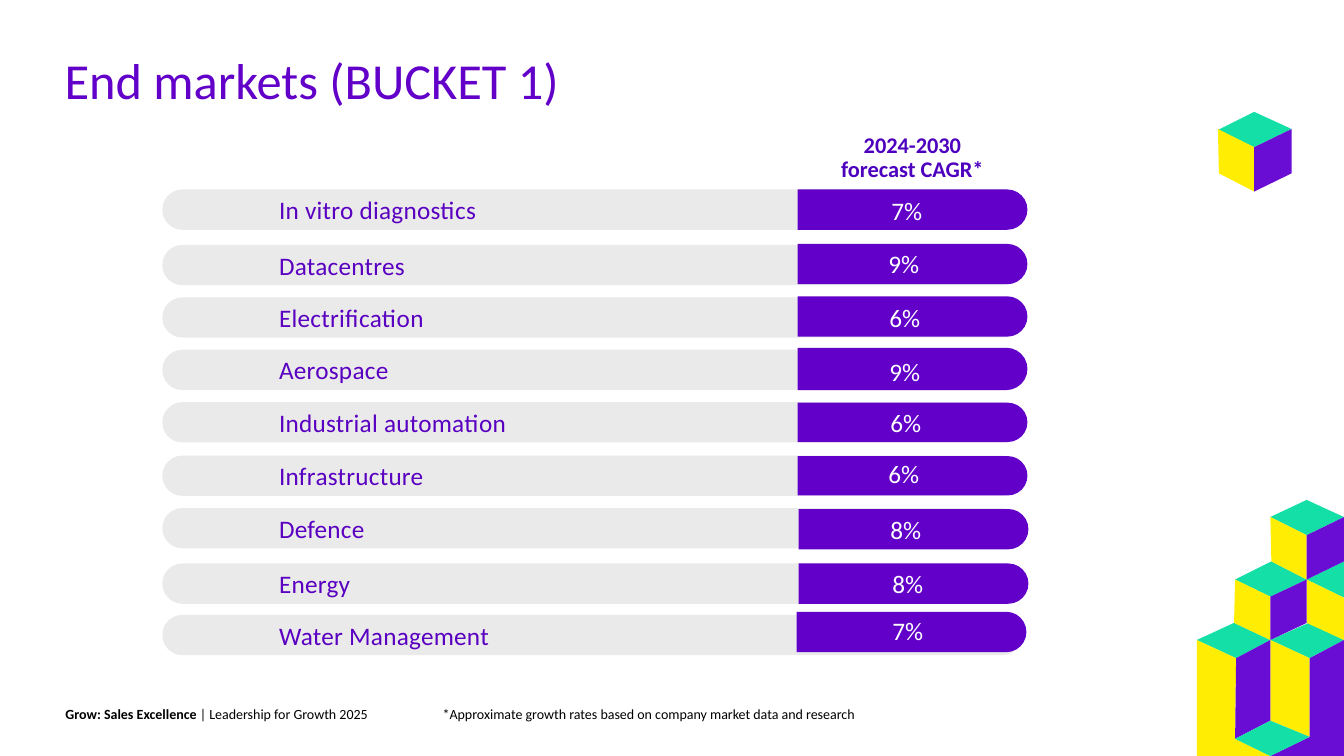
from dataclasses import dataclass

from pptx import Presentation
from pptx.dml.color import RGBColor
from pptx.enum.shapes import MSO_SHAPE as SHAPE
from pptx.enum.text import MSO_ANCHOR as ANCHOR, MSO_AUTO_SIZE as AUTO, PP_ALIGN as ALIGN
from pptx.util import Inches, Pt

PURPLE = RGBColor(0x62, 0x00, 0xC9)
LABEL = RGBColor(0x59, 0x00, 0xC1)
HEADING = RGBColor(0x4D, 0x00, 0xBD)
GREY = RGBColor(0xEA, 0xEA, 0xEA)
WHITE = RGBColor(0xFF, 0xFF, 0xFF)
BLACK = RGBColor(0x00, 0x00, 0x00)
GREEN = RGBColor(0x14, 0xDF, 0xA7)
YELLOW = RGBColor(0xFF, 0xEE, 0x03)
VIOLET = RGBColor(0x6A, 0x0D, 0xD4)

BAR_LEFT, BAR_WIDTH, BAR_HEIGHT = 1.61, 8.53, 0.4
CAP_LENGTH = 2.28
RATE_WIDTH, RATE_HEIGHT = 0.42, 0.27

Point = tuple[int, int]


@dataclass
class Market:
    name: str
    rate: str
    bar_top: float
    cap_centre: tuple[float, float]
    cap_height: float
    rate_at: tuple[float, float]


@dataclass
class Faces:
    color: RGBColor
    polygons: list[list[Point]]


@dataclass
class Span:
    text: str
    size: float
    color: RGBColor
    bold: bool = False
    spacing: int = 0


MARKETS = [
    Market("In vitro diagnostics", "7%", 1.88, (9.05, 2.08), 0.4, (8.84, 1.97)),
    Market("Datacentres", "9%", 2.43, (9.05, 2.62), 0.4, (8.81, 2.5)),
    Market("Electrification", "6%", 2.95, (9.05, 3.14), 0.4, (8.82, 3.03)),
    Market("Aerospace", "9%", 3.47, (9.05, 3.66), 0.42, (8.82, 3.57)),
    Market("Industrial automation", "6%", 3.99, (9.05, 4.19), 0.39, (8.83, 4.07)),
    Market("Infrastructure", "6%", 4.52, (9.05, 4.72), 0.39, (8.81, 4.58)),
    Market("Defence", "8%", 5.04, (9.06, 5.25), 0.4, (8.83, 5.14)),
    Market("Energy", "8%", 5.59, (9.06, 5.79), 0.4, (8.85, 5.67)),
    Market("Water Management", "7%", 6.1, (9.04, 6.27), 0.4, (8.85, 6.14)),
]

CUBES = [
    Faces(GREEN, [
        [(1260, 635), (1224, 618), (1187, 635), (1226, 653)],
        [(1333, 635), (1298, 618), (1260, 635), (1299, 653)],
        [(1333, 557), (1296, 575), (1261, 557), (1225, 575), (1260, 592),
         (1296, 575), (1333, 593)],
        [(1333, 513), (1296, 496), (1260, 513), (1296, 531)],
    ]),
    Faces(YELLOW, [
        [(1260, 750), (1225, 733), (1226, 653), (1187, 635), (1187, 750)],
        [(1260, 635), (1260, 592), (1225, 575), (1224, 618)],
        [(1296, 531), (1260, 513), (1261, 557), (1296, 575)],
        [(1299, 653), (1260, 635), (1260, 715), (1299, 731)],
        [(1333, 593), (1296, 575), (1296, 618), (1333, 635)],
    ]),
    Faces(VIOLET, [
        [(1260, 635), (1226, 653), (1225, 733), (1260, 715)],
        [(1296, 618), (1296, 575), (1260, 592), (1260, 635)],
        [(1333, 750), (1333, 635), (1299, 653), (1299, 731), (1260, 750)],
        [(1333, 513), (1296, 531), (1296, 575), (1333, 557)],
    ]),
    Faces(GREEN, [[(1260, 715), (1225, 733), (1260, 750), (1299, 731)]]),
    Faces(GREEN, [[(1244, 111), (1208, 129), (1244, 146), (1281, 128)]]),
    Faces(YELLOW, [[(1208, 128), (1209, 172), (1244, 190), (1244, 146)]]),
    Faces(VIOLET, [[(1281, 128), (1244, 146), (1244, 190), (1281, 172)]]),
]


def paint(sp, color: RGBColor) -> None:
    sp.shadow.inherit = False
    sp.fill.solid()
    sp.fill.fore_color.rgb = color
    sp.line.fill.background()


def add_faces(s, faces: Faces) -> None:
    first, *others = faces.polygons
    builder = s.shapes.build_freeform(*first[0], scale=Inches(0.01))
    builder.add_line_segments(first[1:], close=True)
    for polygon in others:
        builder.move_to(*polygon[0])
        builder.add_line_segments(polygon[1:], close=True)
    paint(builder.convert_to_shape(), faces.color)


def add_shape(s, kind: SHAPE, box: tuple, color: RGBColor, adjustments: tuple = ()):
    sp = s.shapes.add_shape(kind, *map(Inches, box))
    for i, value in enumerate(adjustments):
        sp.adjustments[i] = value
    paint(sp, color)
    return sp


def write(sp, lines: list[list[Span]], frame: dict, insets: tuple = (0, 0, 0, 0),
          paragraph: dict | None = None) -> None:
    tf = sp.text_frame
    for side, inset in zip(("left", "top", "right", "bottom"), insets):
        setattr(tf, f"margin_{side}", Inches(inset))
    for key, value in frame.items():
        setattr(tf, key, value)
    p = tf.paragraphs[0]
    for key, value in ({"alignment": ALIGN.LEFT} | (paragraph or {})).items():
        setattr(p, key, value)
    for i, line in enumerate(lines):
        if i:
            p.add_line_break()
        for span in line:
            r = p.add_run()
            r.text = span.text
            font = {"name": "Calibri", "size": Pt(span.size), "bold": span.bold}
            for key, value in font.items():
                setattr(r.font, key, value)
            r.font.color.rgb = span.color
            if span.spacing:
                r._r.get_or_add_rPr().set("spc", str(span.spacing))


def add_text(s, box: tuple, lines: list[list[Span]], frame: dict, **formats) -> None:
    write(s.shapes.add_textbox(*map(Inches, box)), lines, frame, **formats)


def add_market(s, market: Market) -> None:
    bar = add_shape(s, SHAPE.ROUNDED_RECTANGLE,
                    (BAR_LEFT, market.bar_top, BAR_WIDTH, BAR_HEIGHT), GREY, (0.5,))
    write(bar, [[Span(market.name, 18, LABEL, spacing=20)]],
          {"word_wrap": True, "vertical_anchor": ANCHOR.MIDDLE}, (1.1, 0.2, 0.1, 0.2))
    x, y = market.cap_centre
    cap = add_shape(s, SHAPE.ROUND_2_SAME_RECTANGLE,
                    (x - market.cap_height / 2, y - CAP_LENGTH / 2,
                     market.cap_height, CAP_LENGTH), PURPLE, (0.5, 0))
    cap.rotation = 90
    rate = add_shape(s, SHAPE.RECTANGLE, (*market.rate_at, RATE_WIDTH, RATE_HEIGHT), PURPLE)
    write(rate, [[Span(market.rate, 18, WHITE)]], FIT,
          paragraph={"line_spacing": 0.9, "space_after": Pt(8)})


FIT = {"word_wrap": False, "vertical_anchor": ANCHOR.MIDDLE,
       "auto_size": AUTO.SHAPE_TO_FIT_TEXT}
WRAP = {"word_wrap": True, "vertical_anchor": ANCHOR.TOP}


def main() -> None:
    prs = Presentation()
    prs.slide_width, prs.slide_height = Inches(13.33), Inches(7.5)
    s = prs.slides.add_slide(prs.slide_layouts[6])
    for faces in CUBES:
        add_faces(s, faces)
    add_text(s, (0.64, 0.48, 11.5, 0.61), [[Span("End markets (BUCKET 1)", 36, PURPLE)]],
             WRAP, insets=(0, 0.01, 0, 0))
    add_text(s, (0.65, 7, 4.27, 0.17),
             [[Span("Grow: Sales Excellence ", 10, BLACK, True),
               Span("| Leadership for Growth 2025", 10, BLACK)]],
             WRAP | {"vertical_anchor": ANCHOR.MIDDLE})
    add_text(s, (4.39, 7, 8.29, 0.17),
             [[Span("*Approximate growth rates based on company market data and research",
                    10, BLACK)]], WRAP)
    add_text(s, (8.16, 1.33, 1.78, 0.48),
             [[Span("2024-2030", 16, HEADING, True)],
              [Span("forecast CAGR*", 16, HEADING, True)]],
             FIT, paragraph={"alignment": ALIGN.CENTER, "line_spacing": 0.9})
    for market in MARKETS:
        add_market(s, market)
    prs.save("out.pptx")


if __name__ == "__main__":
    main()
